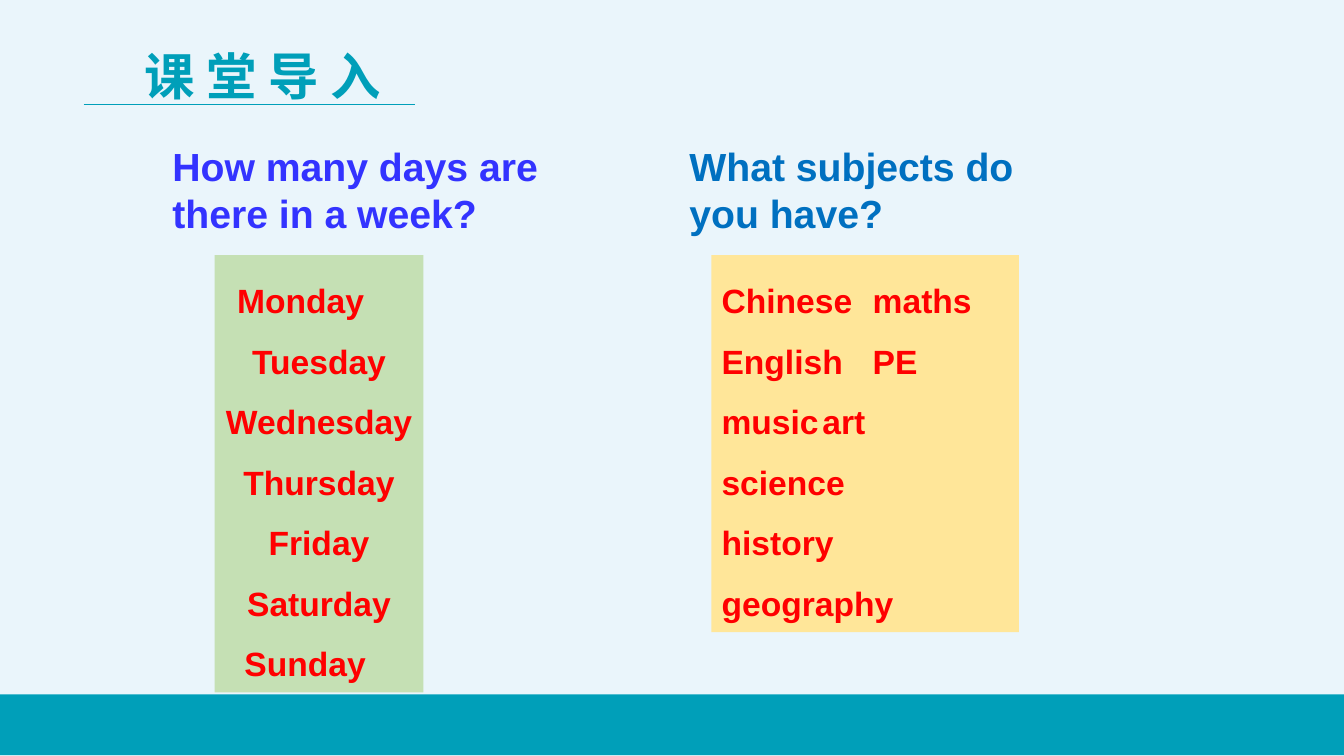
from lxml import etree
from pptx import Presentation
from pptx.dml.color import RGBColor
from pptx.enum.shapes import MSO_CONNECTOR, MSO_SHAPE
from pptx.enum.text import MSO_ANCHOR, MSO_AUTO_SIZE, PP_ALIGN
from pptx.oxml.ns import qn
from pptx.util import Cm, Pt

LEFT, CENTER = PP_ALIGN.LEFT, PP_ALIGN.CENTER
TOP = MSO_ANCHOR.TOP
NO_AUTOFIT = MSO_AUTO_SIZE.NONE
RECTANGLE = MSO_SHAPE.RECTANGLE
STRAIGHT = MSO_CONNECTOR.STRAIGHT
COMPARISON_LAYOUT = 4

COLORS = {
    "background": "EAF5FB", "teal": "009FB9", "red": "FF0000",
    "violet": "3333FF", "blue": "0070C0",
    "green_panel": "C5E0B4", "yellow_panel": "FFE699",
}

TITLE = "课 堂 导 入"
DAYS_QUESTION = "How many days are there in a week?"
SUBJECTS_QUESTION = "What subjects do you have?"
DAYS = ["Monday", "Tuesday", "Wednesday", "Thursday", "Friday", "Saturday", "Sunday"]
DAY_RIGHT_INDENTS = {"Monday": 0.93, "Sunday": 0.7}
SUBJECTS = ["Chinese\tmaths", "English\tPE", "music\tart",
            "science", "history", "geography"]

SLIDE_WIDTH, SLIDE_HEIGHT = 33.87, 19.05
BAND_TOP, BAND_HEIGHT = 17.5, 1.53
QUESTION_TOP, QUESTION_WIDTH, QUESTION_HEIGHT = 3.45, 9.86, 2.64
PANEL_TOP = 6.43
SUBJECT_TAB = 4.25


def color(name):
    return RGBColor.from_string(COLORS[name])


def set_layout_properties(para, right_indent, tab):
    """Remove the bullet and set indents and an optional tab stop (cm)."""
    properties = para._p.get_or_add_pPr()
    properties.set("marL", "0")
    properties.set("indent", "0")
    properties.set("marR", str(Cm(right_indent)))
    etree.SubElement(properties, qn("a:buNone"))
    if tab:
        tabs = etree.SubElement(properties, qn("a:tabLst"))
        etree.SubElement(tabs, qn("a:tab"), pos=str(Cm(tab)), algn="l")


def write(box, lines, place, *, size, ink, font="Arial", align=LEFT, spacing=1.0,
          wrap=True, fill=None, tab=None, right_indents=None):
    """Place a box at (left, top, width, height) in cm and fill it with lines."""
    box.left, box.top, box.width, box.height = map(Cm, place)
    if fill:
        box.fill.solid()
        box.fill.fore_color.rgb = color(fill)
    frame = box.text_frame
    frame.auto_size = NO_AUTOFIT
    frame.word_wrap = wrap
    frame.vertical_anchor = TOP
    for index, line in enumerate(lines):
        para = frame.add_paragraph() if index else frame.paragraphs[0]
        set_layout_properties(para, (right_indents or {}).get(line, 0), tab)
        para.alignment = align
        para.line_spacing = spacing
        para.space_before = Pt(0)
        span = para.add_run()
        span.text = line
        span.font.name = font
        span.font.size = Pt(size)
        span.font.bold = True
        span.font.color.rgb = color(ink)
        east_asian = etree.SubElement(span._r.get_or_add_rPr(), qn("a:ea"))
        east_asian.set("typeface", font)


def add_band(page):
    band = page.shapes.add_shape(RECTANGLE, 0, Cm(BAND_TOP), Cm(SLIDE_WIDTH), Cm(BAND_HEIGHT))
    band.shadow.inherit = False
    band.fill.solid()
    band.fill.fore_color.rgb = color("teal")
    band.line.fill.background()


def add_title_rule(page):
    rule = page.shapes.add_connector(STRAIGHT, Cm(2.11), Cm(2.64), Cm(10.46), Cm(2.64))
    rule.line.color.rgb = color("teal")
    rule.line.width = Pt(0.5)
    etree.SubElement(rule._element.spPr, qn("a:effectLst"))


def main():
    deck = Presentation()
    deck.slide_width, deck.slide_height = Cm(SLIDE_WIDTH), Cm(SLIDE_HEIGHT)
    page = deck.slides.add_slide(deck.slide_layouts[COMPARISON_LAYOUT])
    page.background.fill.solid()
    page.background.fill.fore_color.rgb = color("background")
    title, days_question, days, subjects_question, subjects = page.placeholders

    add_band(page)
    write(title, [TITLE], (3.4, 1, 6.73, 1.8), size=36, ink="teal",
          font="Noto Sans CJK SC", wrap=False)
    add_title_rule(page)

    for box, question, left, ink in (
        (days_question, DAYS_QUESTION, 4.09, "violet"),
        (subjects_question, SUBJECTS_QUESTION, 17.12, "blue"),
    ):
        write(box, [question], (left, QUESTION_TOP, QUESTION_WIDTH, QUESTION_HEIGHT),
              size=28, ink=ink)

    write(days, DAYS, (5.41, PANEL_TOP, 5.26, 11.02), size=24, ink="red", align=CENTER,
          spacing=1.5, fill="green_panel", right_indents=DAY_RIGHT_INDENTS)
    write(subjects, SUBJECTS, (17.93, PANEL_TOP, 7.75, 9.5), size=24, ink="red",
          spacing=1.5, fill="yellow_panel", tab=SUBJECT_TAB)
    deck.save("out.pptx")


if __name__ == "__main__":
    main()
